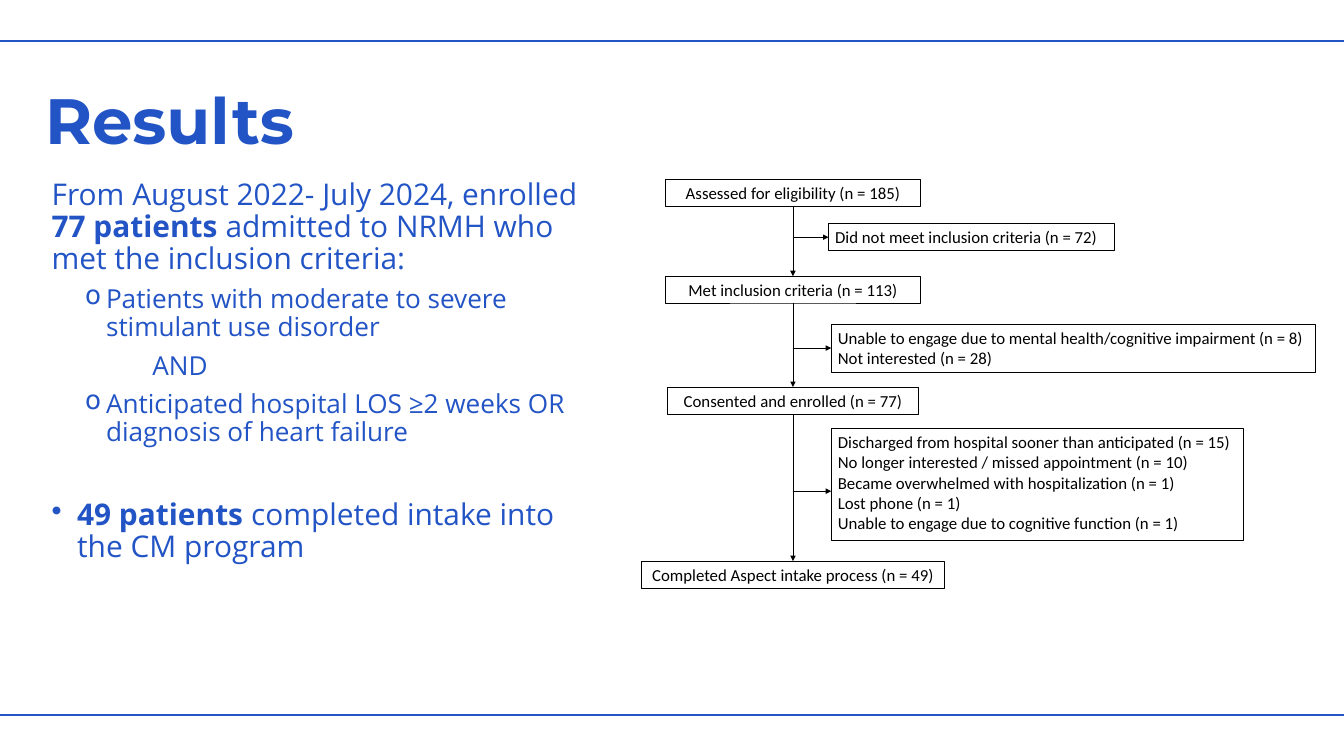
from dataclasses import dataclass
from typing import Optional

from lxml.etree import SubElement
from pptx import Presentation
from pptx.dml.color import RGBColor
from pptx.enum.shapes import MSO_CONNECTOR as Connector, MSO_SHAPE as Shape
from pptx.enum.text import MSO_ANCHOR as Anchor, PP_ALIGN as Align
from pptx.oxml.ns import qn
from pptx.util import Inches, Pt

COLUMNS, ROWS = 20, 11.25
BLUE, BLACK = "2254C5", "000000"
SPINE = 11.8
BOX_HEIGHT, LINE_STEP = 0.4, 0.317


@dataclass(frozen=True)
class Stage:
    text: str
    top: float
    width: float


@dataclass(frozen=True)
class Exclusion:
    lines: tuple[str, ...]
    left: float
    top: float
    width: float
    arrow_row: float


@dataclass(frozen=True)
class Passage:
    spans: tuple[tuple[str, bool], ...]
    size: float
    level: int = 0
    margin: float = 0
    hanging: float = 0
    bullet: Optional[str] = None
    before: float = 6


STAGES = (
    Stage("Assessed for eligibility (n = 185)", 2.67, 3.8),
    Stage("Met inclusion criteria (n = 113)", 4.11, 3.8),
    Stage("Consented and enrolled (n = 77)", 5.76, 3.73),
    Stage("Completed Aspect intake process (n = 49)", 8.35, 4.5),
)
EXCLUSIONS = (
    Exclusion(("Did not meet inclusion criteria (n = 72)",), 12.33, 3.32, 4.26, 3.53),
    Exclusion((
        "Unable to engage due to mental health/cognitive impairment (n = 8)",
        "Not interested (n = 28)",
    ), 12.37, 4.83, 7.21, 5.18),
    Exclusion((
        "Discharged from hospital sooner than anticipated (n = 15)",
        "No longer interested / missed appointment (n = 10)",
        "Became overwhelmed with hospitalization (n = 1)",
        "Lost phone (n = 1)",
        "Unable to engage due to cognitive function (n = 1)",
    ), 12.37, 6.38, 6.13, 7.31),
)
PASSAGES = (
    Passage((
        ("From August 2022- July 2024, enrolled ", False),
        ("77 patients ", True),
        ("admitted to NRMH who met the inclusion criteria:", False),
    ), 32, before=0),
    Passage((("Patients with moderate to severe stimulant use disorder", False),),
            28, 1, 0.81, 0.31, "o"),
    Passage((("AND", False),), 28, 1, 1.5),
    Passage((("Anticipated hospital LOS ≥2 weeks OR diagnosis of heart failure", False),),
            28, 1, 0.81, 0.31, "o"),
    Passage((("49 patients ", True), ("completed intake into the CM program", False)),
            32, 0, 0.38, 0.38, "•", 51),
)

deck = Presentation()
deck.slide_width, deck.slide_height = Inches(COLUMNS), Inches(ROWS)
page = deck.slides.add_slide(deck.slide_layouts[6])


def across(columns: float) -> int:
    return round(deck.slide_width * columns / COLUMNS)


def down(rows: float) -> int:
    return round(deck.slide_height * rows / ROWS)


def color(value: str) -> RGBColor:
    return RGBColor.from_string(value)


def set_font(font, name: str, size: float, shade: str) -> None:
    font.name, font.size = name, Pt(size)
    font.color.rgb = color(shade)


def draw_line(start: tuple[float, float], end: tuple[float, float],
              shade: str = BLACK, weight: float = 0.75, arrow: bool = True) -> None:
    line = page.shapes.add_connector(
        Connector.STRAIGHT, across(start[0]), down(start[1]), across(end[0]), down(end[1]))
    line.line.color.rgb = color(shade)
    line.line.width = Pt(weight)
    properties = line._element.spPr
    if arrow:
        SubElement(properties.find(qn("a:ln")), qn("a:tailEnd"), type="triangle")
    SubElement(properties, qn("a:effectLst"))


def draw_box(lines: tuple[str, ...], left: float, top: float, width: float,
             align: Align) -> None:
    height = BOX_HEIGHT + LINE_STEP * (len(lines) - 1)
    box = page.shapes.add_shape(
        Shape.RECTANGLE, across(left), down(top), across(width), down(height))
    box.shadow.inherit = False
    box.fill.background()
    box.line.color.rgb = color(BLACK)
    box.line.width = Pt(0.75)
    frame = box.text_frame
    frame.word_wrap = True
    frame.vertical_anchor = Anchor.TOP
    frame.text = "\n".join(lines)
    for para in frame.paragraphs:
        para.alignment = align
        set_font(para.font, "Calibri", 18, BLACK)


def draw_title(text: str) -> None:
    box = page.shapes.add_textbox(across(0.67), down(1.01), across(14.07), down(1.28))
    frame = box.text_frame
    frame.word_wrap = True
    frame.margin_left = frame.margin_right = frame.margin_top = frame.margin_bottom = 0
    para = frame.paragraphs[0]
    para.text = text
    para.line_spacing = Pt(96)
    set_font(para.font, "Montserrat", 68.6, BLUE)
    para.font.bold = True


def draw_passages(passages: tuple[Passage, ...]) -> None:
    box = page.shapes.add_textbox(across(0.67), down(2.64), across(8.25), down(6.98))
    frame = box.text_frame
    frame.word_wrap = True
    for index, passage in enumerate(passages):
        para = frame.add_paragraph() if index else frame.paragraphs[0]
        para.level = passage.level
        para.line_spacing = 0.88
        para.space_before, para.space_after = Pt(passage.before), Pt(6)
        properties = para._p.get_or_add_pPr()
        properties.set("marL", str(across(passage.margin)))
        properties.set("indent", str(-across(passage.hanging)))
        if passage.bullet:
            SubElement(properties, qn("a:buChar"), char=passage.bullet)
        set_font(para.font, "Open Sans", passage.size, BLUE)
        for text, bold in passage.spans:
            span = para.add_run()
            span.text = text
            span.font.bold = bold


def draw_flow() -> None:
    for stage in STAGES:
        draw_box((stage.text,), SPINE - stage.width / 2, stage.top, stage.width, Align.CENTER)
    for upper, lower in zip(STAGES, STAGES[1:]):
        draw_line((SPINE, upper.top + BOX_HEIGHT), (SPINE, lower.top))
    for exclusion in EXCLUSIONS:
        draw_box(exclusion.lines, exclusion.left, exclusion.top, exclusion.width, Align.LEFT)
        draw_line((SPINE, exclusion.arrow_row), (exclusion.left, exclusion.arrow_row))


def main() -> None:
    for row in (0.61, 10.64):
        draw_line((0, row), (COLUMNS, row), BLUE, 3, arrow=False)
    draw_title("Results")
    draw_passages(PASSAGES)
    draw_flow()
    deck.save("out.pptx")


if __name__ == "__main__":
    main()
